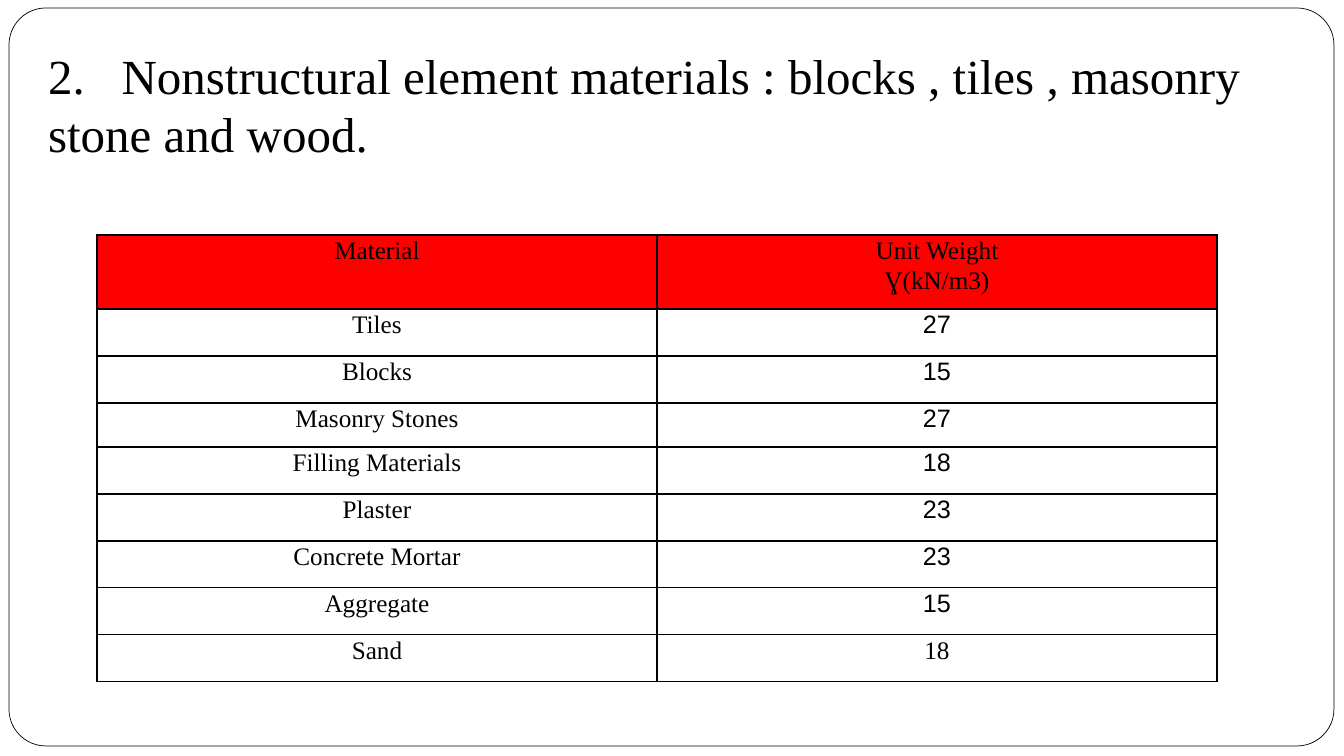
from lxml.etree import SubElement
from pptx import Presentation
from pptx.dml.color import RGBColor
from pptx.enum.shapes import MSO_SHAPE
from pptx.enum.text import MSO_ANCHOR, MSO_AUTO_SIZE, PP_ALIGN
from pptx.oxml.ns import qn
from pptx.util import Pt

PX = 914400 / 100.8
COLORS = {"ink": "000000", "paper": "FFFFFF", "header": "FF0000"}
FONT = "Times New Roman"
ROWS = [
    ("Material", "Unit Weight\nƔ(kN/m3)"),
    ("Tiles", "27"),
    ("Blocks", "15"),
    ("Masonry Stones", "27"),
    ("Filling Materials", "18"),
    ("Plaster", "23"),
    ("Concrete Mortar", "23"),
    ("Aggregate", "15"),
    ("Sand", "18"),
]
ROW_HEIGHTS = [74, 47, 47, 44] + [47] * 5


def px(*lengths):
    return [round(length * PX) for length in lengths]


def color(name):
    return RGBColor.from_string(COLORS[name])


prs = Presentation()
prs.slide_width, prs.slide_height = px(1344, 756)
slide = prs.slides.add_slide(prs.slide_layouts[1])
title = slide.shapes.title
title.element.getparent().remove(title.element)

# Rounded page frame, behind everything else
frame = slide.shapes.add_shape(MSO_SHAPE.ROUNDED_RECTANGLE, *px(9, 8, 1325, 738))
frame.adjustments[0] = 0.05
frame.shadow.inherit = False
frame.fill.solid()
frame.fill.fore_color.rgb = color("paper")
frame.line.color.rgb = color("ink")
frame.line.width = Pt(0.5)
slide.shapes._spTree.insert(2, frame.element)

# Statement
statement = slide.placeholders[1]
statement.left, statement.top, statement.width, statement.height = px(35, 38, 1263, 643)
text = statement.text_frame
text.text = "2.   Nonstructural element materials : blocks , tiles , masonry stone and wood."
text.auto_size = MSO_AUTO_SIZE.NONE
text.vertical_anchor = MSO_ANCHOR.TOP
text.margin_left, text.margin_right, text.margin_top, text.margin_bottom = px(13, 13, 7, 7)
sentence = text.paragraphs[0]
sentence.space_before = Pt(7.7)
properties = sentence._p.get_or_add_pPr()
properties.set("marL", "0")
properties.set("indent", "0")
SubElement(properties, qn("a:buNone"))
font = sentence.runs[0].font
font.name, font.size = FONT, Pt(35)
font.color.rgb = color("ink")

# Unit weights
weights = slide.shapes.add_table(len(ROWS), 2, *px(97, 235, 1120, sum(ROW_HEIGHTS))).table
weights.first_row = weights.horz_banding = False
for column in weights.columns:
    column.width = px(560)[0]

for r, (labels, height) in enumerate(zip(ROWS, ROW_HEIGHTS)):
    weights.rows[r].height = px(height)[0]
    for c, label in enumerate(labels):
        cell = weights.cell(r, c)
        cell.text_frame.text = label
        cell.margin_left, cell.margin_right, cell.margin_top, cell.margin_bottom = px(7, 7, 0, 0)
        cell.fill.solid()
        cell.fill.fore_color.rgb = color("paper" if r else "header")

        borders = cell._tc.get_or_add_tcPr()
        for i, side in enumerate(("lnL", "lnR", "lnT", "lnB")):
            border = SubElement(borders, qn("a:" + side), w=str(Pt(1)))
            line_fill = SubElement(border, qn("a:solidFill"))
            SubElement(line_fill, qn("a:srgbClr"), val=COLORS["ink"])
            borders.insert(i, border)

        right_to_left = c == 1 and 0 < r < len(ROWS) - 1
        for paragraph in cell.text_frame.paragraphs:
            paragraph.alignment = PP_ALIGN.CENTER
            paragraph.line_spacing = 1.07
            run = paragraph.runs[0]
            run.font.name, run.font.size = FONT, Pt(18)
            run.font.color.rgb = color("ink")
            if right_to_left:
                paragraph._p.get_or_add_pPr().set("rtl", "1")
                SubElement(run._r.get_or_add_rPr(), qn("a:cs"), typeface="Arial")

prs.save("out.pptx")
